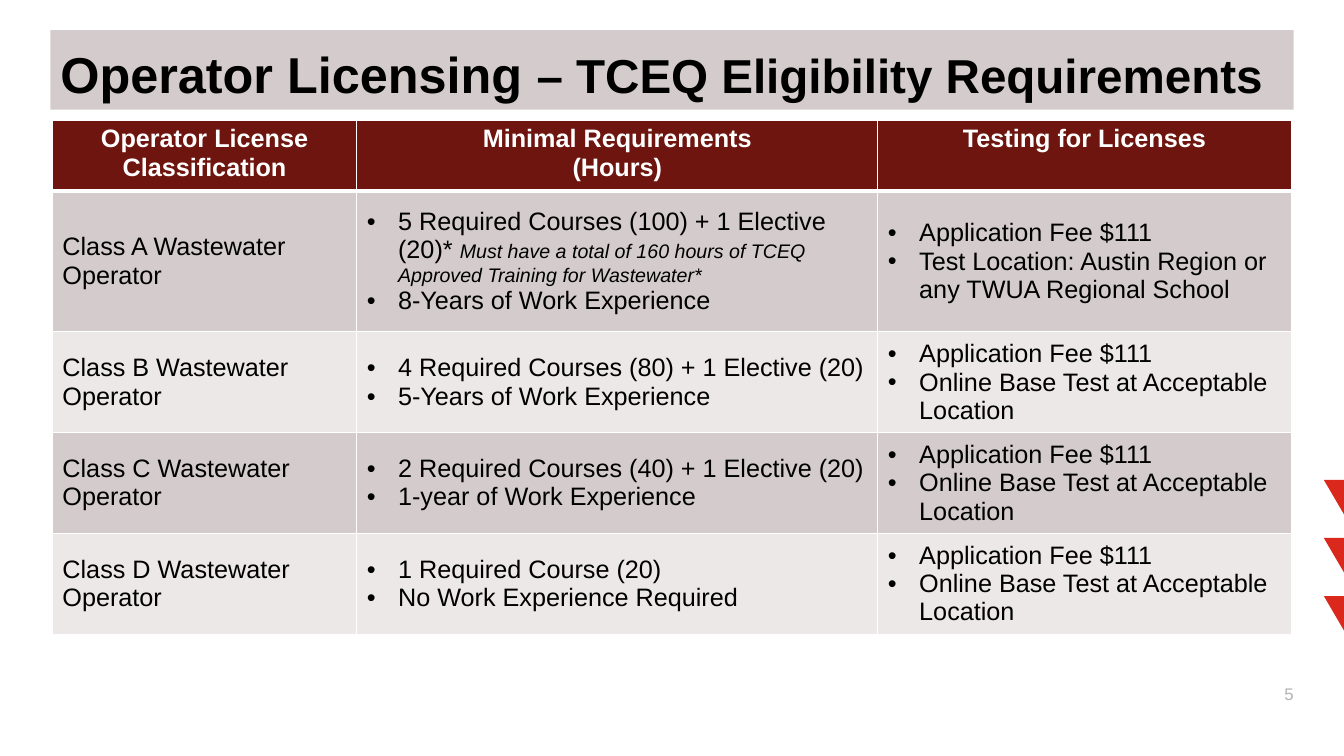
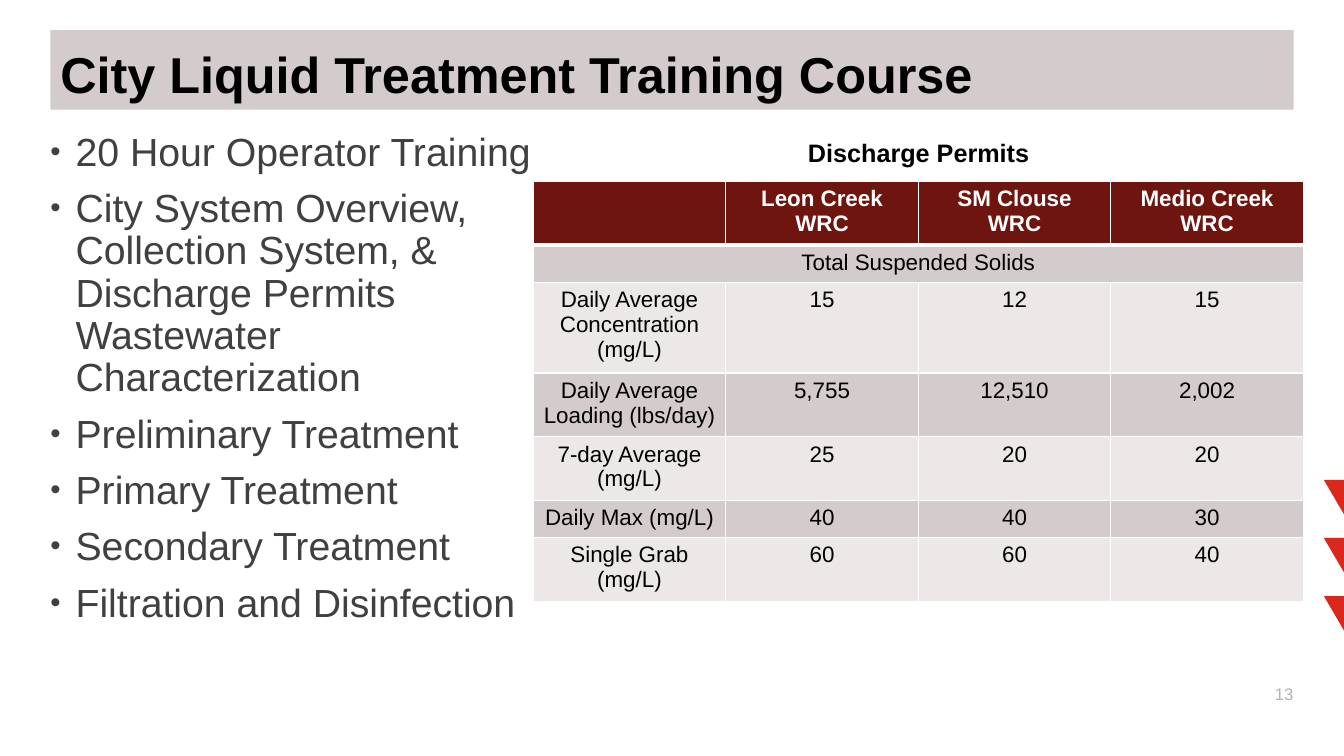
from lxml.etree import SubElement
from pptx import Presentation
from pptx.dml.color import RGBColor
from pptx.enum.shapes import MSO_SHAPE
from pptx.enum.text import MSO_ANCHOR, PP_ALIGN
from pptx.oxml.ns import qn
from pptx.util import Inches, Pt

COLORS = {"band": "D4CCCC", "pale": "EBE8E7", "header": "6D150E", "accent": "DA281C",
          "ink": "000000", "body": "404040", "number": "B3B3B3", "white": "FFFFFF"}
FONT = "Arial"

deck = Presentation()
deck.slide_width, deck.slide_height = Inches(13.33), Inches(7.5)

# Grid: 40 columns by 25 rows
COL, ROW = deck.slide_width / 40, deck.slide_height / 25


def write(frame, paragraphs, size=18, color="ink", bold=False, align=PP_ALIGN.LEFT,
          anchor=MSO_ANCHOR.TOP, indent=0, bullet_size=100, spacing=1.0, before=0,
          inset=None):
    """Fill a text frame; a paragraph is a string or a list of (text, size, italic)."""
    frame.word_wrap = True
    frame.vertical_anchor = anchor
    if inset is not None:
        frame.margin_left = frame.margin_right = inset
        frame.margin_top = frame.margin_bottom = inset
    for index, content in enumerate(paragraphs):
        paragraph = frame.add_paragraph() if index else frame.paragraphs[0]
        paragraph.alignment = align
        paragraph.line_spacing = spacing
        paragraph.space_before = Pt(before if index else 0)
        if indent:
            props = paragraph._p.get_or_add_pPr()
            props.set("marL", str(Inches(indent)))
            props.set("indent", str(-Inches(indent)))
            SubElement(props, qn("a:buSzPct"), val=str(bullet_size * 1000))
            SubElement(props, qn("a:buFont"), typeface=FONT)
            SubElement(props, qn("a:buChar"), char="•")
        runs = [(content, size, False)] if isinstance(content, str) else content
        for text, run_size, italic in runs:
            run = paragraph.add_run()
            run.text = text
            run.font.name, run.font.size = FONT, Pt(run_size)
            run.font.bold, run.font.italic = bold, italic
            run.font.color.rgb = RGBColor.from_string(COLORS[color])


def add_grid(slide, left, top, widths, heights, rows, size, styles):
    """Add a banded table; styles holds the text format of each body column."""
    table = slide.shapes.add_table(
        len(heights), len(widths), int(left * COL), int(top * ROW),
        int(sum(widths) * COL), int(sum(heights) * ROW)).table
    table.first_row = table.horz_banding = False
    for column, width in zip(table.columns, widths):
        column.width = int(width * COL)
    for r, (height, entries) in enumerate(zip(heights, rows)):
        table.rows[r].height = int(height * ROW)
        for c, style in enumerate(styles):
            cell = table.cell(r, c)
            for side in ("lnL", "lnR", "lnT", "lnB"):
                thick = (r == 0 and side == "lnB") or (r == 1 and side == "lnT")
                line = SubElement(cell._tc.get_or_add_tcPr(), qn("a:" + side),
                                  w=str(Pt(3 if thick else 1)))
                SubElement(SubElement(line, qn("a:solidFill")), qn("a:srgbClr"),
                           val=COLORS["white"])
            cell.fill.solid()
            fill = "header" if r == 0 else "band" if r % 2 else "pale"
            cell.fill.fore_color.rgb = RGBColor.from_string(COLORS[fill])
            look = dict(color="white", bold=True, align=PP_ALIGN.CENTER) if r == 0 else dict(style)
            cell.vertical_anchor = look.pop("cell_anchor", MSO_ANCHOR.TOP)
            entry = entries[c] if c < len(entries) else ""
            write(cell.text_frame, [entry] if isinstance(entry, str) else entry,
                  size=size, anchor=None, **look)
        if len(entries) == 1:
            table.cell(r, 0).merge(table.cell(r, len(widths) - 1))


# Parts shared by both slides: corner triangles, page number, title band
pages = [
    ("5", [("Operator Licensing ", 36, False),
           ("– TCEQ Eligibility Requirements", 34, False)]),
    ("13", "City Liquid Treatment Training Course"),
]
slides = []
for page_number, title in pages:
    slide = deck.slides.add_slide(deck.slide_layouts[6])
    slides.append(slide)
    for step in range(3):
        marker = slide.shapes.add_shape(
            MSO_SHAPE.ISOSCELES_TRIANGLE, int(39.4 * COL), int((15.87 + 1.92 * step) * ROW),
            int(1.23 * COL), int(1.17 * ROW))
        marker.rotation = 180
        marker.shadow.inherit = False
        marker.fill.solid()
        marker.fill.fore_color.rgb = RGBColor.from_string(COLORS["accent"])
        marker.line.fill.background()
    footer = slide.shapes.add_textbox(int(34.24 * COL), int(21.97 * ROW),
                                      int(4.26 * COL), int(1.33 * ROW))
    write(footer.text_frame, [page_number], size=12, color="number", align=PP_ALIGN.RIGHT,
          anchor=MSO_ANCHOR.BOTTOM, spacing=0.9, inset=0)
    title_band = slide.shapes.add_shape(MSO_SHAPE.RECTANGLE, int(1.5 * COL), int(ROW),
                                        int(37 * COL), int(2.63 * ROW))
    title_band.shadow.inherit = False
    title_band.fill.solid()
    title_band.fill.fore_color.rgb = RGBColor.from_string(COLORS["band"])
    title_band.line.fill.background()
    write(title_band.text_frame, [title], size=36, bold=True,
          anchor=MSO_ANCHOR.BOTTOM, spacing=0.9)
licensing, course = slides

# Licensing: requirements for each class
requirements = {
    "A": [[("5 Required Courses (100) + 1 Elective (20)* ", 18, False),
           ("Must have a total of 160 hours of TCEQ Approved Training for Wastewater*", 14, True)],
          "8-Years of Work Experience"],
    "B": ["4 Required Courses (80) + 1 Elective (20)", "5-Years of Work Experience"],
    "C": ["2 Required Courses (40) + 1 Elective (20)", "1-year of Work Experience"],
    "D": ["1 Required Course (20)", "No Work Experience Required"],
}
license_rows = [["Operator License Classification", ["Minimal Requirements", "(Hours)"],
                 "Testing for Licenses"]]
for grade, needs in requirements.items():
    place = ("Test Location: Austin Region or any TWUA Regional School" if grade == "A"
             else "Online Base Test at Acceptable Location")
    license_rows.append([f"Class {grade} Wastewater Operator", needs,
                         ["Application Fee $111", place]])
plain = dict(cell_anchor=MSO_ANCHOR.MIDDLE)
bulleted = dict(plain, indent=0.31)
add_grid(licensing, 1.56, 3.97, [9.06, 15.51, 12.3], [2.33, 4.67] + [3.33] * 3,
         license_rows, 18, [plain, bulleted, bulleted])

# Course: topics on the left
topics = course.shapes.add_textbox(int(1.5 * COL), int(4.37 * ROW),
                                   int(15.3 * COL), int(17.07 * ROW))
write(topics.text_frame, [
    "20 Hour Operator Training",
    "City System Overview, Collection System, & Discharge Permits Wastewater Characterization",
    "Preliminary Treatment",
    "Primary Treatment",
    "Secondary Treatment",
    "Filtration and Disinfection",
], size=28, color="body", indent=0.25, bullet_size=75, spacing=0.9, before=10, inset=0)

# Course: discharge permits on the right
permit_rows = [
    ["", "Leon Creek WRC", "SM Clouse WRC", "Medio Creek WRC"],
    ["Total Suspended Solids"],
    ["Daily Average Concentration (mg/L)", "15", "12", "15"],
    ["Daily Average Loading (lbs/day)", "5,755", "12,510", "2,002"],
    ["7-day Average (mg/L)", "25", "20", "20"],
    ["Daily Max (mg/L)", "40", "40", "30"],
    ["Single Grab (mg/L)", "60", "60", "40"],
]
add_grid(course, 15.87, 6, [5.73] * 4, [1.83, 1.07, 2.6, 1.83, 1.83, 1.07, 1.83],
         permit_rows, 16, [dict(align=PP_ALIGN.CENTER)] * 4)
permits_heading = course.shapes.add_textbox(int(19.27 * COL), int(4.37 * ROW),
                                            int(16.14 * COL), int(1.33 * ROW))
write(permits_heading.text_frame, ["Discharge Permits"], bold=True, align=PP_ALIGN.CENTER)

deck.save("out.pptx")
